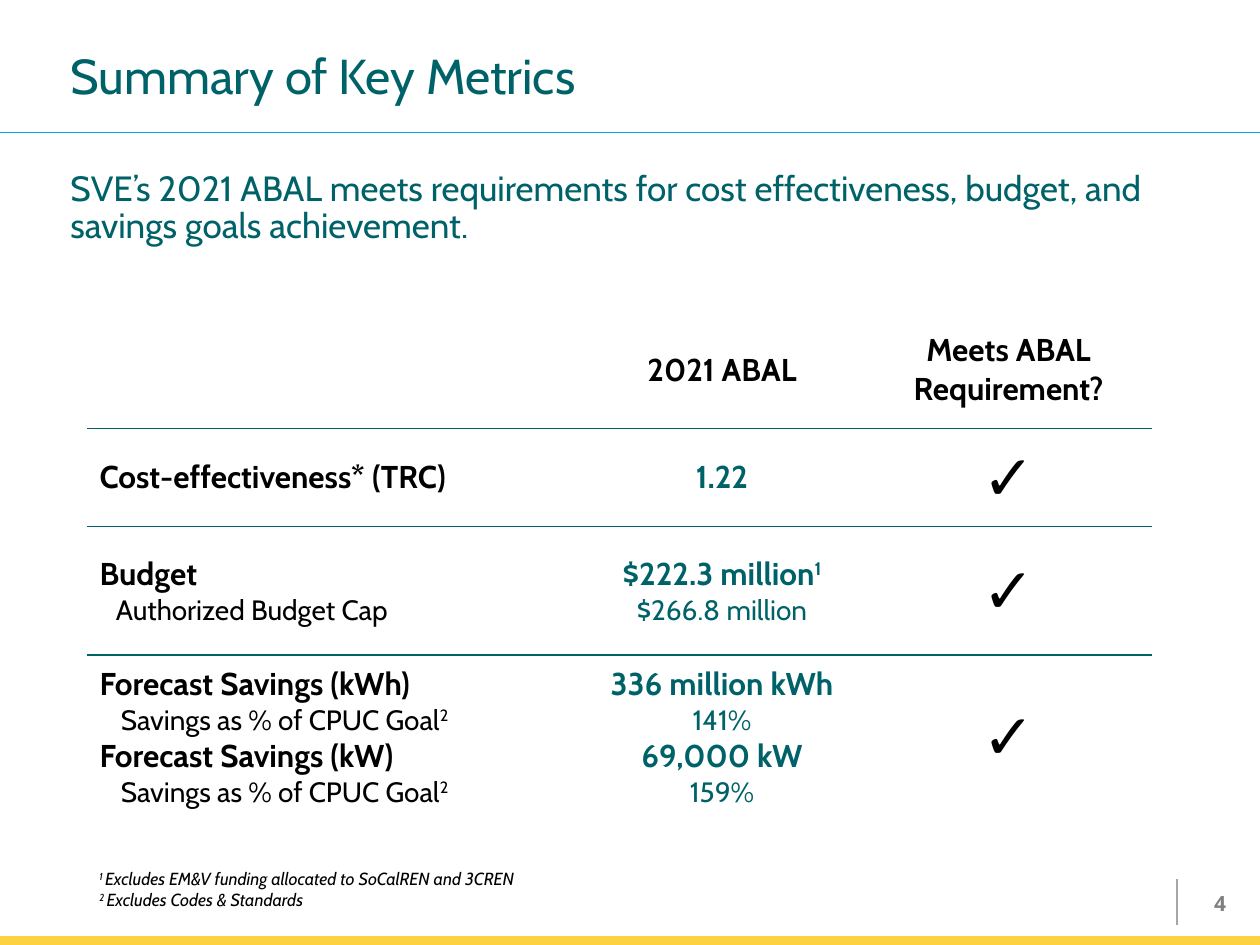
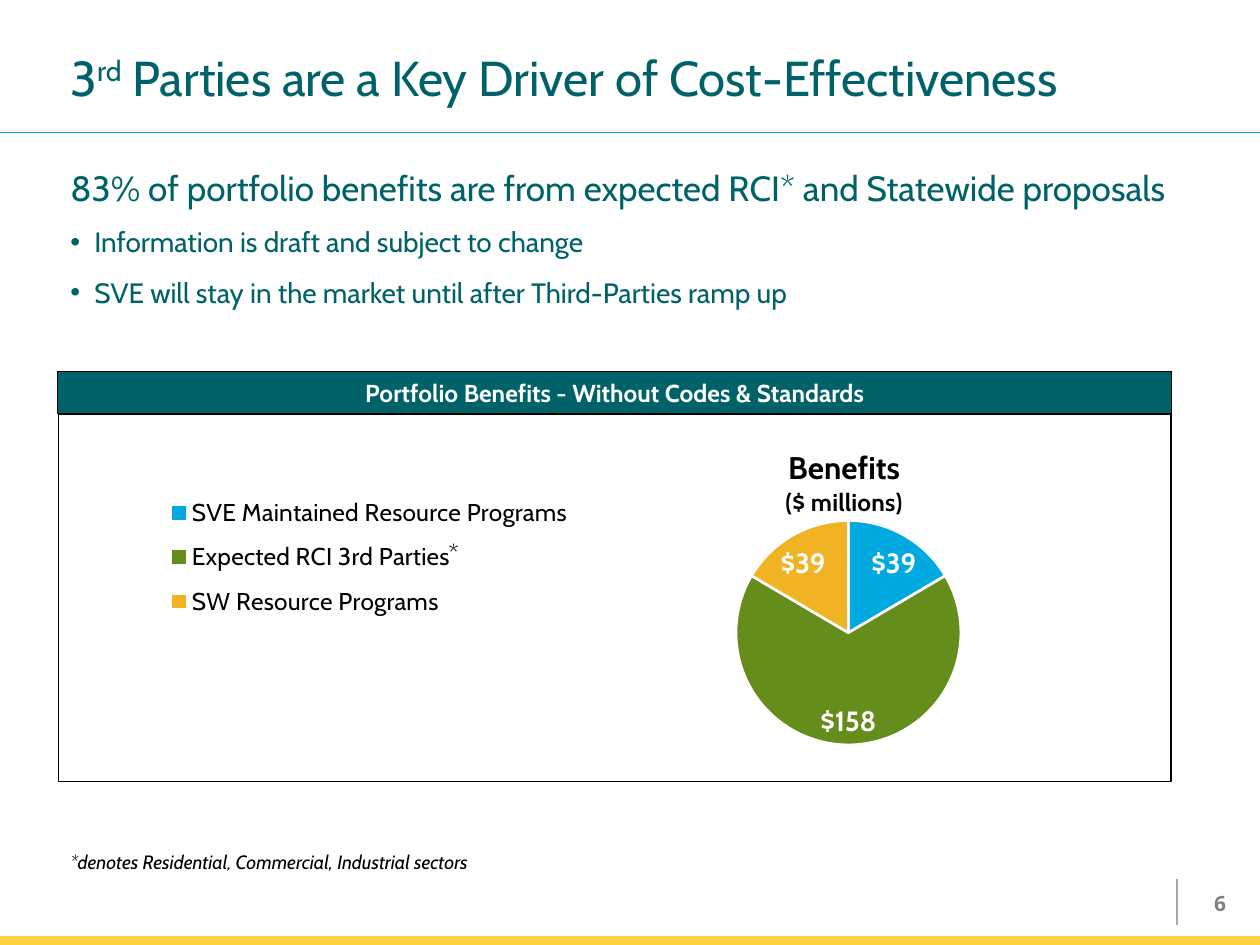
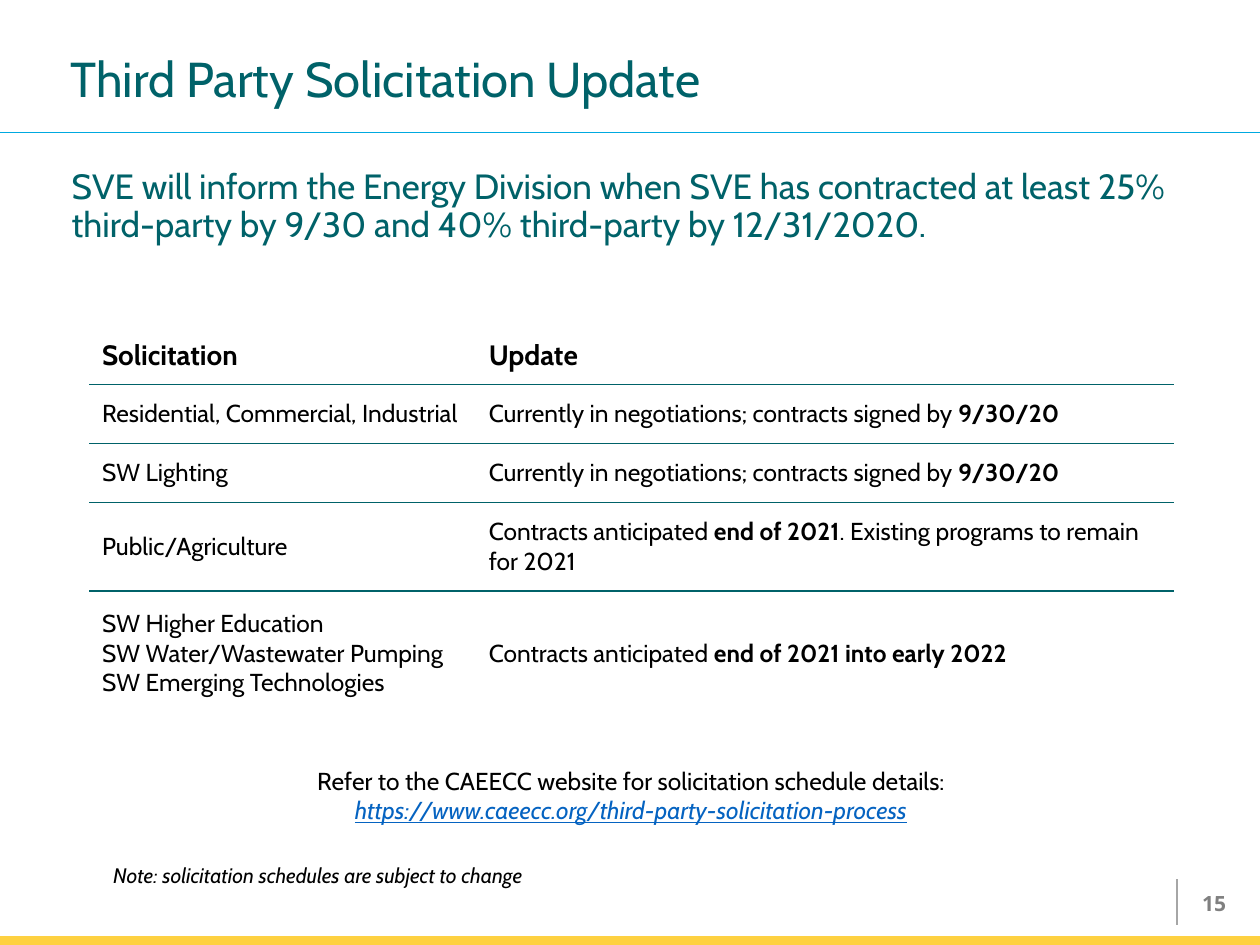
from lxml import etree
from pptx import Presentation
from pptx.chart import data
from pptx.dml.color import RGBColor
from pptx.enum import chart as charts, shapes, text
from pptx.oxml import ns
from pptx.util import Inches, Pt

TEAL = RGBColor(0x00, 0x62, 0x69)
BLUE = RGBColor(0x00, 0xA9, 0xE0)
GREEN = RGBColor(0x65, 0x8D, 0x1B)
AMBER = RGBColor(0xF0, 0xB3, 0x23)
YELLOW = RGBColor(0xFE, 0xD1, 0x41)
LINK = RGBColor(0x05, 0x63, 0xC1)
GRAY = RGBColor(0x80, 0x80, 0x80)
SILVER = RGBColor(0xA6, 0xA6, 0xA6)
BLACK = RGBColor(0x00, 0x00, 0x00)
WHITE = RGBColor(0xFF, 0xFF, 0xFF)
CENTER = text.PP_ALIGN.CENTER
PLAIN_TABLE = "{2D5ABB26-0587-4C30-8999-92F81FD0307C}"


def add_xml(parent, tag, **attributes):
    return etree.SubElement(parent, ns.qn(tag), attributes)


def line(*spans, **style):
    return spans, style


def manual_layout(inner=False, **fractions):
    layout = etree.Element(ns.qn("c:layout"))
    manual = add_xml(layout, "c:manualLayout")
    if inner:
        add_xml(manual, "c:layoutTarget", val="inner")
    for axis in "xy":
        add_xml(manual, f"c:{axis}Mode", val="edge")
    for name, value in fractions.items():
        add_xml(manual, f"c:{name}", val=str(value))
    return layout


def drop_layout(element):
    for old in element.findall(ns.qn("c:layout")):
        element.remove(old)


class Deck:
    def __init__(self):
        self.deck = Presentation()
        self.deck.slide_width = Inches(10)
        self.deck.slide_height = Inches(7.5)
        self.page = None

    def new_page(self, title, number, title_top):
        self.page = self.deck.slides.add_slide(self.deck.slide_layouts[6])
        self.rule(9.34, 6.98, 9.34, 7.34, SILVER, 1)
        self.band(0, 7.43, 10, 0.08, YELLOW)
        self.rule(0, 1.05, 10, 1.05, BLUE, 0.5)
        self.box(0.46, title_top, 8.62, 0.56,
                 [line(*title, size=28, color=TEAL, spacing=0.9)], middle=True)
        self.box(9.27, 6.97, 0.56, 0.4,
                 [line(number, size=12, font="Open Sans", color=GRAY, bold=True,
                       align=text.PP_ALIGN.RIGHT)], middle=True)

    def rule(self, x1, y1, x2, y2, color, width):
        rule = self.page.shapes.add_connector(
            shapes.MSO_CONNECTOR.STRAIGHT, Inches(x1), Inches(y1), Inches(x2), Inches(y2))
        rule.line.color.rgb = color
        rule.line.width = Pt(width)
        add_xml(rule._element.spPr, "a:effectLst")

    def band(self, left, top, width, height, fill, border=None, lines=()):
        band = self.page.shapes.add_shape(
            shapes.MSO_SHAPE.RECTANGLE, Inches(left), Inches(top), Inches(width), Inches(height))
        band.shadow.inherit = False
        band.fill.solid()
        band.fill.fore_color.rgb = fill
        if border is None:
            band.line.fill.background()
        else:
            band.line.color.rgb = border
            band.line.width = Pt(0.5)
        if lines:
            self.fill_text(band.text_frame, lines)

    def box(self, left, top, width, height, lines, middle=False):
        box = self.page.shapes.add_textbox(Inches(left), Inches(top), Inches(width), Inches(height))
        frame = box.text_frame
        frame.word_wrap = True
        if middle:
            frame.vertical_anchor = text.MSO_ANCHOR.MIDDLE
        self.fill_text(frame, lines)

    def fill_text(self, frame, lines):
        for index, (spans, style) in enumerate(lines):
            para = frame.add_paragraph() if index else frame.paragraphs[0]
            self.style(para, **style)
            for span in spans:
                content, effect = (span, None) if isinstance(span, str) else span
                run = para.add_run()
                run.text = content
                if effect == "super":
                    run._r.get_or_add_rPr().set("baseline", "30000")
                elif effect == "bold":
                    run.font.bold = True

    def style(self, para, size=14, font="Cabin", color=BLACK, bold=False, italic=False,
              underline=False, align=None, spacing=None, indent=0, bullet=False):
        properties = para._p.get_or_add_pPr()
        if indent:
            properties.set("marL", str(Inches(indent)))
        if bullet:
            properties.set("indent", str(-Inches(indent)))
            add_xml(properties, "a:buFont", typeface="Arial")
            add_xml(properties, "a:buChar", char="•")
        if align is not None:
            para.alignment = align
        if spacing:
            para.line_spacing = spacing
        para.font.size = Pt(size)
        para.font.name = font
        para.font.color.rgb = color
        para.font.bold = bold
        para.font.italic = italic
        para.font.underline = underline

    def table(self, left, top, widths, heights, rows):
        frame = self.page.shapes.add_table(
            len(heights), len(widths), Inches(left), Inches(top),
            Inches(sum(widths)), Inches(sum(heights)))
        table = frame.table
        table.first_row = table.horz_banding = False
        table._tbl.tblPr.find(ns.qn("a:tableStyleId")).text = PLAIN_TABLE
        for column, width in zip(table.columns, widths):
            column.width = Inches(width)
        for row, height, contents in zip(table.rows, heights, rows):
            row.height = Inches(height)
            for cell, lines in zip(row.cells, contents):
                cell.vertical_anchor = text.MSO_ANCHOR.MIDDLE
                self.fill_text(cell.text_frame, lines)
                if contents is not rows[-1]:
                    self.underline_cell(cell)
                cell.fill.background()

    def underline_cell(self, cell):
        border = add_xml(cell._tc.get_or_add_tcPr(), "a:lnB", w=str(Pt(1)))
        add_xml(add_xml(border, "a:solidFill"), "a:srgbClr", val=str(TEAL))

    def pie(self, left, top, width, height, title, slices):
        values = data.CategoryChartData()
        values.categories = [name for name, _, _ in slices]
        values.add_series("Series 1", [value for _, value, _ in slices])
        chart = self.page.shapes.add_chart(
            charts.XL_CHART_TYPE.PIE, Inches(left), Inches(top),
            Inches(width), Inches(height), values).chart
        chart.font.size = Pt(10)
        chart.font.name = "Cabin"
        chart.font.color.rgb = TEAL

        chart.has_title = True
        self.fill_text(chart.chart_title.text_frame, title)
        heading = chart.chart_title._element
        drop_layout(heading)
        heading.find(ns.qn("c:tx")).addnext(manual_layout(x=0.65, y=0.08))

        chart.has_legend = True
        legend = chart.legend
        legend.position = charts.XL_LEGEND_POSITION.BOTTOM
        legend.include_in_layout = False
        legend.font.size = Pt(14)
        legend.font.name = "Cabin"
        legend.font.color.rgb = BLACK
        drop_layout(legend._element)
        legend._element.find(ns.qn("c:legendPos")).addnext(
            manual_layout(x=0.09, y=0.19, w=0.38, h=0.4))

        plot = chart.plots[0]
        plot.vary_by_categories = True
        for index, (_, _, color) in enumerate(slices):
            look = plot.series[0].points[index].format
            look.fill.solid()
            look.fill.fore_color.rgb = color
            look.line.color.rgb = WHITE
            look.line.width = Pt(1.5)
        plot.has_data_labels = True
        labels = plot.data_labels
        labels.show_value = True
        labels.show_percentage = False
        labels.number_format = '"$"#,##0'
        labels.number_format_is_linked = False
        labels.position = charts.XL_LABEL_POSITION.BEST_FIT
        labels.font.size = Pt(16)
        labels.font.bold = True
        labels.font.name = "Cabin"
        labels.font.color.rgb = WHITE

        drawing = chart._chartSpace.find(ns.qn("c:chart"))
        area = drawing.find(ns.qn("c:plotArea"))
        drop_layout(area)
        area.insert(0, manual_layout(inner=True, x=0.59, y=0.29, w=0.24, h=0.61))
        frame = etree.Element(ns.qn("c:spPr"))
        add_xml(frame, "a:noFill")
        outline = add_xml(frame, "a:ln", w=str(Pt(0.75)))
        add_xml(add_xml(outline, "a:solidFill"), "a:srgbClr", val=str(BLACK))
        drawing.addnext(frame)


def metrics_page(deck):
    deck.new_page(["Summary of Key Metrics"], "4", 0.34)
    head = dict(size=18, bold=True)
    figure = dict(head, color=TEAL, align=CENTER)
    detail = dict(size=16, color=TEAL, align=CENTER)
    check = [line("✓", size=36, bold=True, align=CENTER)]
    goal = line("Savings as % of CPUC Goal", ("2", "super"), size=16, indent=0.17)
    rows = [
        [[], [line("2021 ABAL", align=CENTER, **head)],
         [line("Meets ABAL Requirement?", align=CENTER, **head)]],
        [[line("Cost-effectiveness* (TRC)", **head)], [line("1.22", **figure)], check],
        [[line("Budget", **head), line("Authorized Budget Cap", size=16, indent=0.13)],
         [line("$222.3 million", ("1", "super"), **figure), line("$266.8 million", **detail)],
         check],
        [[line("Forecast Savings (kWh)", **head), goal,
          line("Forecast Savings (kW)", **head), goal],
         [line("336 million kWh", **figure), line("141%", **detail),
          line("69,000 kW", **figure), line("159%", **detail)],
         check],
    ]
    note = dict(size=10, italic=True)
    deck.box(0.69, 6.84, 3.86, 0.44, [
        line(("1 ", "super"), "Excludes EM&V funding allocated to SoCalREN and 3CREN", **note),
        line(("2 ", "super"), "Excludes Codes & Standards", **note)])
    deck.table(0.69, 2.47, [3.9, 2.28, 2.27], [0.93, 0.78, 1.02, 1.3], rows)
    deck.box(0.46, 1.11, 9.09, 1.09, [
        line("SVE’s 2021 ABAL meets requirements for cost effectiveness, budget, "
             "and savings goals achievement.", size=20, color=TEAL, spacing=0.9)], middle=True)


def benefits_page(deck):
    deck.new_page(["3", ("rd", "super"), " Parties are a Key Driver of Cost-Effectiveness"],
                  "6", 0.36)
    deck.pie(0.46, 3.28, 8.84, 2.93,
             [line("Benefits", size=18, bold=True, align=CENTER),
              line("($ millions)", bold=True, align=CENTER)],
             [("SVE Maintained Resource Programs", 39, BLUE),
              ("Expected RCI 3rd Parties", 158, GREEN),
              ("SW Resource Programs", 39, AMBER)])
    deck.band(0.46, 2.95, 8.84, 0.33, TEAL, BLACK,
              [line("Portfolio Benefits - Without Codes & Standards",
                    color=WHITE, bold=True, align=CENTER)])
    deck.box(3.46, 4.22, 0.28, 0.34, [line("*")])
    deck.box(0.46, 6.7, 3.45, 0.29, [
        line("*denotes Residential, Commercial, Industrial sectors", size=11, italic=True)])
    bullet = dict(size=16, color=TEAL, spacing=1.5, indent=0.19, bullet=True)
    deck.box(0.46, 1.09, 9.09, 1.42, [
        line("83% of portfolio benefits are from expected RCI* and Statewide proposals",
             size=20, color=TEAL, spacing=1.5),
        line("Information is draft and subject to change", **bullet),
        line("SVE will stay in the market until after Third-Parties ramp up", **bullet)],
        middle=True)


def solicitation_page(deck):
    deck.new_page(["Third Party Solicitation Update"], "15", 0.37)
    deck.box(0.47, 1.22, 9.09, 0.85, [
        line("SVE will inform the Energy Division when SVE has contracted at least 25% "
             "third-party by 9/30 and 40% third-party by 12/31/2020.",
             size=20, color=TEAL, spacing=0.9)], middle=True)
    deck.box(0.8, 6.8, 4.21, 0.3, [
        line("Note: solicitation schedules are subject to change", size=12, italic=True)])
    deck.box(1.86, 6.03, 6.3, 0.57, [
        line("Refer to the CAEECC website for solicitation schedule details:", align=CENTER),
        line("https://www.caeecc.org/third-party-solicitation-process",
             color=LINK, italic=True, underline=True, align=CENTER)])
    signing = [line("Currently in negotiations; contracts signed by ", ("9/30/20", "bold"))]
    rows = [
        [[line(name, size=16, bold=True)] for name in ("Solicitation", "Update")],
        [[line("Residential, Commercial, Industrial")], signing],
        [[line("SW Lighting")], signing],
        [[line("Public/Agriculture")],
         [line("Contracts anticipated ", ("end of 2021", "bold"),
               ". Existing programs to remain for 2021")]],
        [[line("SW Higher Education"), line("SW Water/Wastewater Pumping"),
          line("SW Emerging Technologies")],
         [line("Contracts anticipated ", ("end of 2021 into early 2022", "bold"))]],
    ]
    deck.table(0.71, 2.6, [3.07, 5.54], [0.45, 0.47, 0.47, 0.7, 0.99], rows)


def main():
    deck = Deck()
    metrics_page(deck)
    benefits_page(deck)
    solicitation_page(deck)
    deck.deck.save("out.pptx")


if __name__ == "__main__":
    main()
